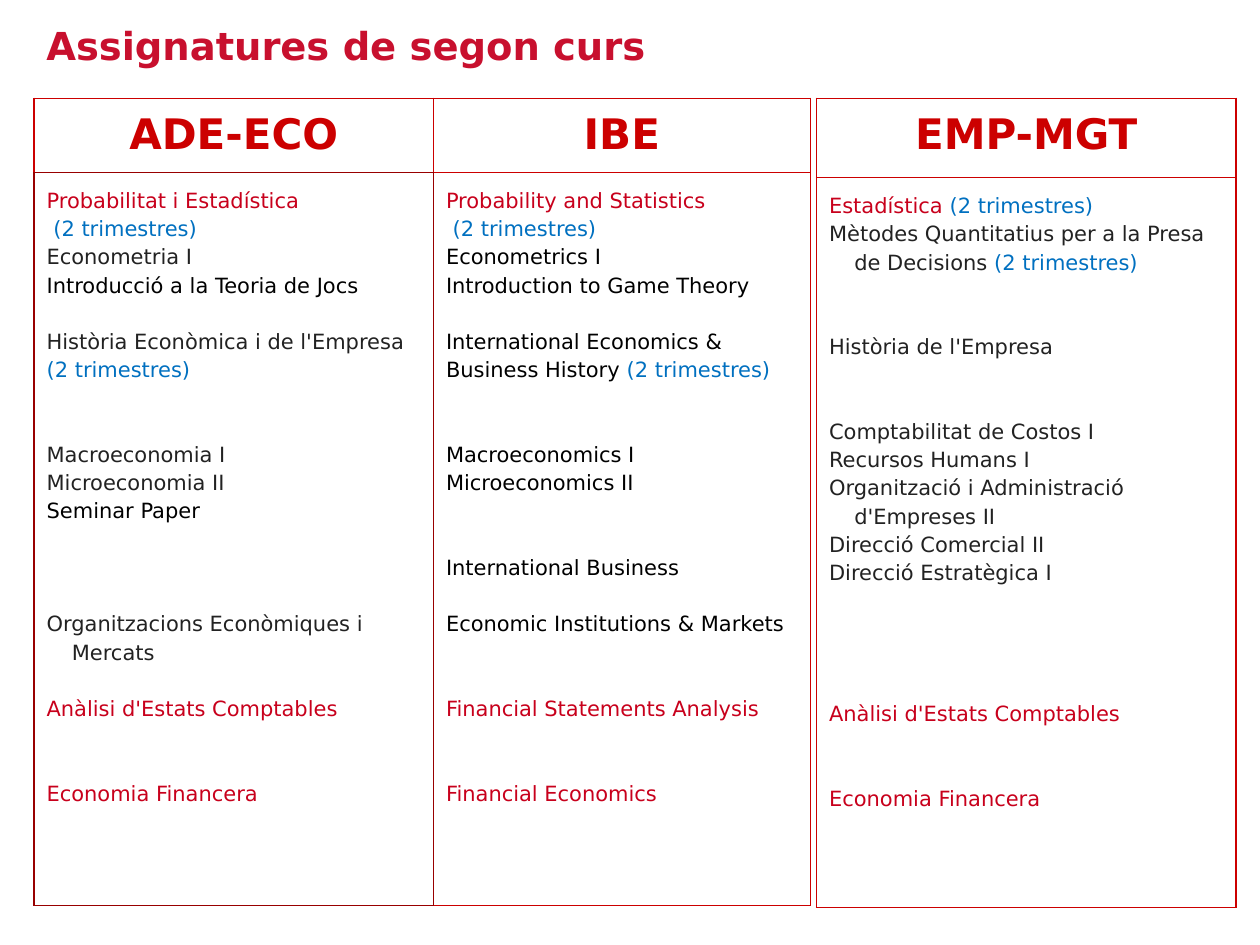
from lxml import etree
from pptx import Presentation
from pptx import util as u
from pptx.dml.color import RGBColor
from pptx.enum import text
from pptx.oxml.ns import qn

FONT = "DejaVu Sans"
BODY_LINE = 16.1  # height in points of one body line
COLORS = {
    "title": "C8102E",
    "header": "CC0000",
    "core": "C8001C",
    "terms": "0070C0",
    "grey": "222222",
    "black": "000000",
    "border": "CC0000",
    "dark_border": "980000",
}
TERMS = ("(2 trimestres)", "terms")


def course(name, color="grey", gap=0, hanging=False, terms=False):
    """Describe one course line; gap is the number of free lines above it."""
    runs = [(name, color)] + ([TERMS] if terms else [])
    return {"runs": runs, "gap": gap, "hanging": hanging}


ADE_ECO = [
    course("Probabilitat i Estadística", "core"),
    course(" ", "core", terms=True),
    course("Econometria I"),
    course("Introducció a la Teoria de Jocs", "black"),
    course("Història Econòmica i de l'Empresa ", gap=1, terms=True),
    course("Macroeconomia I", gap=2),
    course("Microeconomia II"),
    course("Seminar Paper", "black"),
    course("Organitzacions Econòmiques i Mercats", gap=3, hanging=True),
    course("Anàlisi d'Estats Comptables", "core", gap=1),
    course("Economia Financera", "core", gap=2),
]
IBE = [
    course("Probability and Statistics", "core"),
    course(" ", "core", terms=True),
    course("Econometrics I", "black"),
    course("Introduction to Game Theory", "black"),
    course("International Economics & Business History ", "black", gap=1, terms=True),
    course("Macroeconomics I", "black", gap=2),
    course("Microeconomics II", "black"),
    course("International Business", "black", gap=2),
    course("Economic Institutions & Markets", "black", gap=1),
    course("Financial Statements Analysis", "core", gap=2),
    course("Financial Economics", "core", gap=2),
]
EMP_MGT = [
    course("Estadística ", "core", terms=True),
    course("Mètodes Quantitatius per a la Presa de Decisions ", hanging=True, terms=True),
    course("Història de l'Empresa", gap=2),
    course("Comptabilitat de Costos I", gap=2),
    course("Recursos Humans I"),
    course("Organització i Administració d'Empreses II", hanging=True),
    course("Direcció Comercial II"),
    course("Direcció Estratègica I"),
    course("Anàlisi d'Estats Comptables", "core", gap=4),
    course("Economia Financera", "core", gap=2),
]


def add_run(paragraph, words, size, color, bold=False):
    run = paragraph.add_run()
    run.text = words
    run.font.name = FONT
    run.font.size = u.Pt(size)
    run.font.bold = bold
    run.font.color.rgb = RGBColor.from_string(COLORS[color])


def set_margins(box):
    box.margin_left = box.margin_right = u.Inches(0.1)
    box.margin_top = box.margin_bottom = u.Inches(0.1)


def set_borders(cell, **edges):
    """Draw thin borders; edges maps L, R, T and B to colour names."""
    properties = cell._tc.get_or_add_tcPr()
    for side in "LRTB":
        line = etree.SubElement(properties, qn(f"a:ln{side}"), w=str(u.Pt(0.75)))
        fill = etree.SubElement(line, qn("a:solidFill"))
        color = COLORS[edges.get(side, "border")]
        etree.SubElement(fill, qn("a:srgbClr"), val=color)
        etree.SubElement(line, qn("a:prstDash"), val="solid")


def fill_header(cell, name):
    paragraph = cell.text_frame.paragraphs[0]
    paragraph.alignment = text.PP_ALIGN.CENTER
    add_run(paragraph, name, 24, "header", bold=True)


def fill_courses(cell, courses):
    frame = cell.text_frame
    for index, item in enumerate(courses):
        paragraph = frame.add_paragraph() if index else frame.paragraphs[0]
        paragraph.line_spacing = 1.15
        paragraph.space_before = u.Pt(item["gap"] * BODY_LINE)
        if item["hanging"]:
            indent = u.Inches(0.2)
            properties = paragraph._p.get_or_add_pPr()
            properties.set("marL", str(indent))
            properties.set("indent", str(-indent))
        for words, color in item["runs"]:
            add_run(paragraph, words, 12, color)


def add_title(slide, left, top, width, height):
    box = slide.shapes.add_textbox(left, top, width, height)
    frame = box.text_frame
    frame.word_wrap = True
    frame.vertical_anchor = text.MSO_ANCHOR.MIDDLE
    set_margins(frame)
    add_run(frame.paragraphs[0], "Assignatures de segon curs", 22, "title", bold=True)


def add_course_table(slide, left, top, widths, heights, degrees, edges):
    """Place one column per degree; edges maps (row, column) to border colours."""
    frame = slide.shapes.add_table(
        2, len(degrees), left, top, sum(widths), sum(heights))
    table = frame.table
    table.first_row = table.horz_banding = False
    for row, height in zip(table.rows, heights):
        row.height = height
    for index, (name, courses) in enumerate(degrees):
        table.columns[index].width = widths[index]
        fill_header(table.cell(0, index), name)
        fill_courses(table.cell(1, index), courses)
        for row in range(2):
            cell = table.cell(row, index)
            set_margins(cell)
            set_borders(cell, **edges.get((row, index), {}))
            cell.fill.background()


def main():
    presentation = Presentation()
    presentation.slide_width = u.Inches(10)
    presentation.slide_height = u.Inches(7.5)
    slide = presentation.slides.add_slide(presentation.slide_layouts[6])

    left, top = u.Inches(0.27), u.Inches(0.78)
    dark = "dark_border"
    add_course_table(
        slide, left, top,
        [u.Inches(3.17), u.Inches(2.99)], [u.Inches(0.57), u.Inches(5.82)],
        [("ADE-ECO", ADE_ECO), ("IBE", IBE)],
        {(0, 0): {"B": dark},
         (1, 0): {"L": dark, "R": dark, "T": dark, "B": dark},
         (1, 1): {"L": dark}})
    add_title(slide, left, u.Inches(0.12), u.Inches(8.64), u.Inches(0.47))
    add_course_table(
        slide, u.Inches(6.48), top,
        [u.Inches(3.33)], [u.Inches(0.63), u.Inches(5.79)],
        [("EMP-MGT", EMP_MGT)], {})
    presentation.save("out.pptx")


if __name__ == "__main__":
    main()
